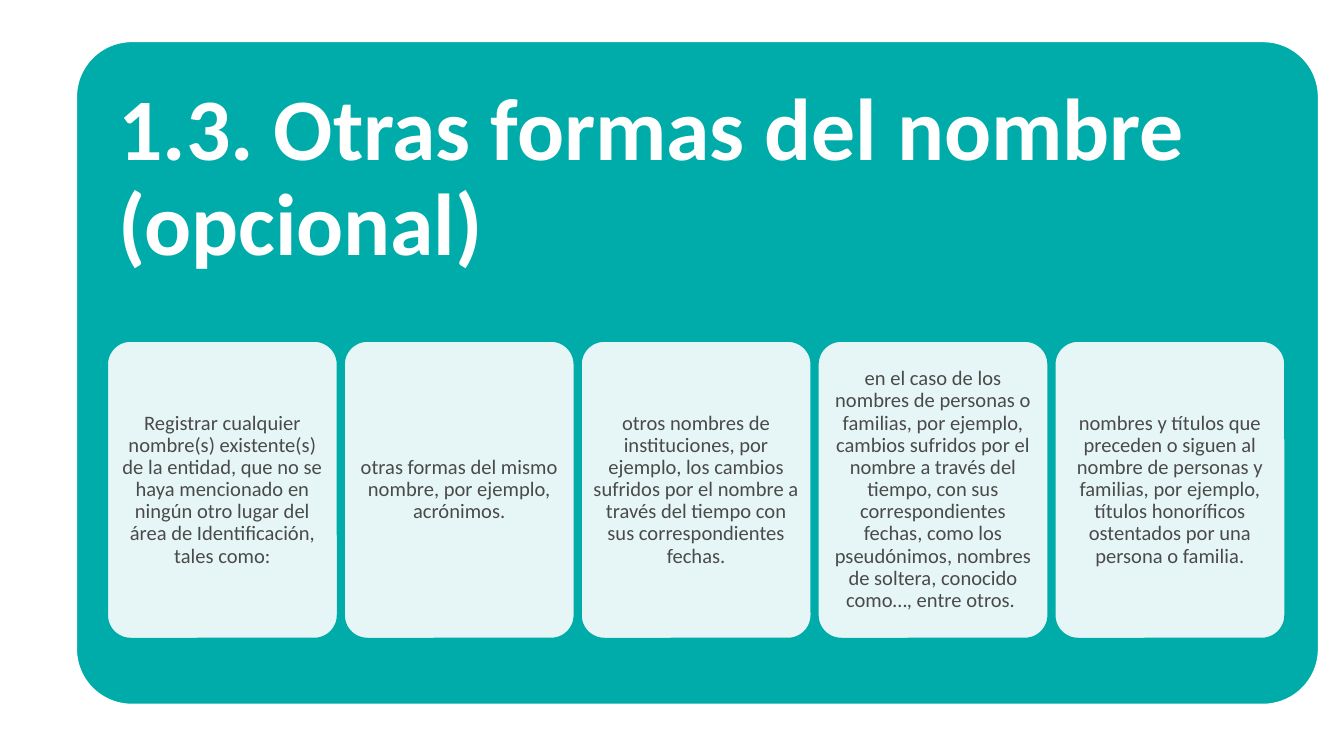
from dataclasses import dataclass

import lxml.etree
import pptx
import pptx.dml.color
import pptx.enum.shapes
import pptx.enum.text
import pptx.oxml.ns
import pptx.util
from pptx.util import Inches

WHITE = pptx.dml.color.RGBColor(0xFF, 0xFF, 0xFF)
TEAL = pptx.dml.color.RGBColor(0x00, 0xAC, 0xA9)
GREY = pptx.dml.color.RGBColor(0x4A, 0x4A, 0x49)


@dataclass(frozen=True)
class Box:
    left: float
    top: float
    width: float
    height: float

    def lengths(self) -> list[pptx.util.Length]:
        return [Inches(n) for n in (self.left, self.top, self.width, self.height)]


@dataclass(frozen=True)
class TextStyle:
    size: float
    color: pptx.dml.color.RGBColor
    bold: bool
    align: pptx.enum.text.PP_ALIGN
    anchor: pptx.enum.text.MSO_ANCHOR
    inset: float


TITLE_STYLE = TextStyle(47, WHITE, True, pptx.enum.text.PP_ALIGN.LEFT,
                        pptx.enum.text.MSO_ANCHOR.TOP, 0.2)
CARD_STYLE = TextStyle(11, GREY, False, pptx.enum.text.PP_ALIGN.CENTER,
                       pptx.enum.text.MSO_ANCHOR.MIDDLE, 0.05)

PANEL = Box(0.56, 0.3, 9.26, 4.95)
TITLE_AREA = Box(0.68, 0.43, 9.01, 4.7)
FIRST_CARD = Box(0.79, 2.53, 1.73, 2.23)
LAST_CARD_LEFT = 7.84
CARD_MARGIN = 0.05

TITLE = "1.3. Otras formas del nombre (opcional)"
CARDS = [
    "Registrar cualquier nombre(s) existente(s) de la entidad, que no se haya "
    "mencionado en ningún otro lugar del área de Identificación, tales como:",
    "otras formas del mismo nombre, por ejemplo, acrónimos.",
    "otros nombres de instituciones, por ejemplo, los cambios sufridos por el "
    "nombre a través del tiempo con sus correspondientes fechas.",
    "en el caso de los nombres de personas o familias, por ejemplo, cambios "
    "sufridos por el nombre a través del tiempo, con sus correspondientes fechas, "
    "como los pseudónimos, nombres de soltera, conocido como…, entre otros. ",
    "nombres y títulos que preceden o siguen al nombre de personas y familias, por "
    "ejemplo, títulos honoríficos ostentados por una persona o familia.",
]


def add_panel(slide: pptx.slide.Slide, box: Box, corner: float,
              fill: pptx.dml.color.RGBColor, line: pptx.dml.color.RGBColor,
              opacity: int = 100) -> None:
    panel = slide.shapes.add_shape(
        pptx.enum.shapes.MSO_SHAPE.ROUNDED_RECTANGLE, *box.lengths())
    panel.adjustments[0] = corner
    panel.shadow.inherit = False
    panel.fill.solid()
    panel.fill.fore_color.rgb = fill
    panel.line.color.rgb = line
    panel.line.width = pptx.util.Pt(2)
    if opacity < 100:
        qn = pptx.oxml.ns.qn
        color = panel.fill._xPr.find(qn("a:solidFill")).find(qn("a:srgbClr"))
        lxml.etree.SubElement(color, qn("a:alpha"), val=str(opacity * 1000))


def add_text(slide: pptx.slide.Slide, box: Box, text: str, style: TextStyle) -> None:
    frame = slide.shapes.add_textbox(*box.lengths()).text_frame
    frame.word_wrap = True
    frame.vertical_anchor = style.anchor
    frame.margin_left = frame.margin_right = Inches(style.inset)
    frame.margin_top = frame.margin_bottom = Inches(style.inset)
    paragraph = frame.paragraphs[0]
    paragraph.text = text
    paragraph.alignment = style.align
    paragraph.line_spacing = 0.9
    paragraph.font.name = "Calibri"
    paragraph.font.size = pptx.util.Pt(style.size)
    paragraph.font.bold = style.bold
    paragraph.font.color.rgb = style.color


def main() -> None:
    presentation = pptx.Presentation()
    # Widescreen, 16 to 9
    presentation.slide_width = Inches(10)
    presentation.slide_height = Inches(10 * 9 / 16)
    slide = presentation.slides.add_slide(presentation.slide_layouts[6])

    # Background panel and title
    add_panel(slide, PANEL, 0.085, TEAL, WHITE)
    add_text(slide, TITLE_AREA, TITLE, TITLE_STYLE)

    # Row of evenly spaced cards
    pitch = (LAST_CARD_LEFT - FIRST_CARD.left) / (len(CARDS) - 1)
    for index, text in enumerate(CARDS):
        card = Box(FIRST_CARD.left + index * pitch, FIRST_CARD.top,
                   FIRST_CARD.width, FIRST_CARD.height)
        text_area = Box(card.left + CARD_MARGIN, card.top + CARD_MARGIN,
                        card.width - 2 * CARD_MARGIN, card.height - 2 * CARD_MARGIN)
        add_panel(slide, card, 0.105, WHITE, TEAL, opacity=90)
        add_text(slide, text_area, text, CARD_STYLE)

    presentation.save("out.pptx")


if __name__ == "__main__":
    main()
